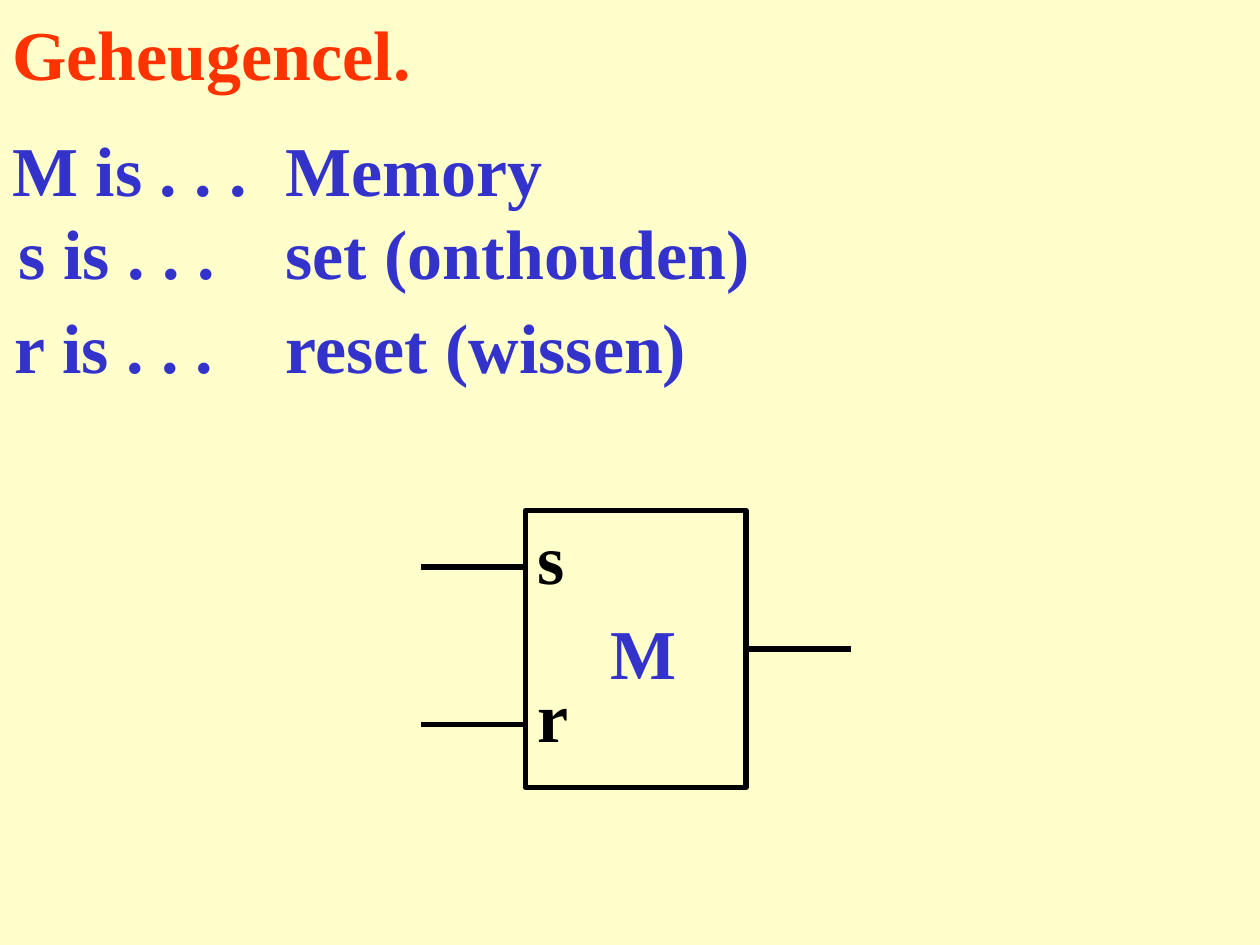
from dataclasses import dataclass

from lxml.etree import SubElement
from pptx import Presentation
from pptx.dml.color import RGBColor
from pptx.enum.shapes import MSO_CONNECTOR, MSO_SHAPE
from pptx.enum.text import MSO_ANCHOR, MSO_AUTO_SIZE, PP_ALIGN
from pptx.oxml.ns import qn
from pptx.util import Inches, Pt


@dataclass(frozen=True)
class Theme:
    background: RGBColor = RGBColor(0xFF, 0xFF, 0xCC)
    heading: RGBColor = RGBColor(0xFF, 0x33, 0x00)
    accent: RGBColor = RGBColor(0x33, 0x33, 0xCC)
    ink: RGBColor = RGBColor(0, 0, 0)
    font: str = "Times New Roman"
    size: Pt = Pt(40)
    stroke: Pt = Pt(3)


THEME = Theme()
HEADING = "Geheugencel."
DEFINITIONS = [
    ("M is . . .", "Memory", 0, 0.92),
    ("s is . . .", "set (onthouden)", 0.05, 1.58),
    ("r is . . .", "reset (wissen)", 0.02, 2.33),
]
INPUTS = [("s", 4.5, 3.92), ("r", 5.75, 5.17)]
OUTPUT = "M"

ROW_HEIGHT = 0.83
TERM_WIDTH, MEANING_WIDTH = 2.17, 5.75
CELL_LEFT, CELL_TOP, CELL_WIDTH, CELL_HEIGHT = 4.17, 4.05, 1.75, 2.2
LEAD = 0.83
LABEL_WIDTH, LABEL_HEIGHT = 0.67, 1


def write(holder, words, color):
    frame = holder.text_frame
    frame.word_wrap = True
    frame.auto_size = MSO_AUTO_SIZE.NONE
    frame.vertical_anchor = MSO_ANCHOR.MIDDLE
    line = frame.paragraphs[0]
    line.alignment = PP_ALIGN.LEFT
    run = line.add_run()
    run.text = words
    run.font.name = THEME.font
    run.font.size = THEME.size
    run.font.bold = True
    run.font.color.rgb = color


def add_words(slide, words, color, *place):
    write(slide.shapes.add_textbox(*map(Inches, place)), words, color)


def add_lead(slide, start, end, y):
    lead = slide.shapes.add_connector(
        MSO_CONNECTOR.STRAIGHT, Inches(start), Inches(y), Inches(end), Inches(y))
    lead.line.color.rgb = THEME.ink
    lead.line.width = THEME.stroke
    SubElement(lead._element.spPr, qn("a:effectLst"))
    return lead


def add_definitions(slide):
    for term, meaning, left, top in DEFINITIONS:
        add_words(slide, term, THEME.accent, left, top, TERM_WIDTH, ROW_HEIGHT)
        add_words(slide, meaning, THEME.accent,
                  TERM_WIDTH, top, MEANING_WIDTH, ROW_HEIGHT)


def add_memory_cell(slide):
    cell = slide.shapes.add_shape(
        MSO_SHAPE.RECTANGLE,
        *map(Inches, (CELL_LEFT, CELL_TOP, CELL_WIDTH, CELL_HEIGHT)))
    cell.shadow.inherit = False
    cell.fill.background()
    cell.line.color.rgb = THEME.ink
    cell.line.width = THEME.stroke

    right, middle = CELL_LEFT + CELL_WIDTH, CELL_TOP + CELL_HEIGHT / 2
    output = add_lead(slide, right, right + LEAD, middle)
    output.begin_connect(cell, 3)
    add_words(slide, OUTPUT, THEME.accent, 4.75, 4.67, LABEL_WIDTH, LABEL_HEIGHT)

    for pin, lead_y, label_top in INPUTS:
        add_lead(slide, CELL_LEFT - LEAD, CELL_LEFT, lead_y)
        add_words(slide, pin, THEME.ink,
                  CELL_LEFT, label_top, LABEL_WIDTH, LABEL_HEIGHT)


def main():
    deck = Presentation()
    deck.slide_width, deck.slide_height = Inches(10), Inches(7.5)
    slide = deck.slides.add_slide(deck.slide_layouts[5])
    slide.background.fill.solid()
    slide.background.fill.fore_color.rgb = THEME.background

    heading = slide.shapes.title
    heading.left, heading.top = 0, 0
    heading.width, heading.height = Inches(3.42), Inches(ROW_HEIGHT)
    write(heading, HEADING, THEME.heading)

    add_definitions(slide)
    add_memory_cell(slide)
    deck.save("out.pptx")


if __name__ == "__main__":
    main()
